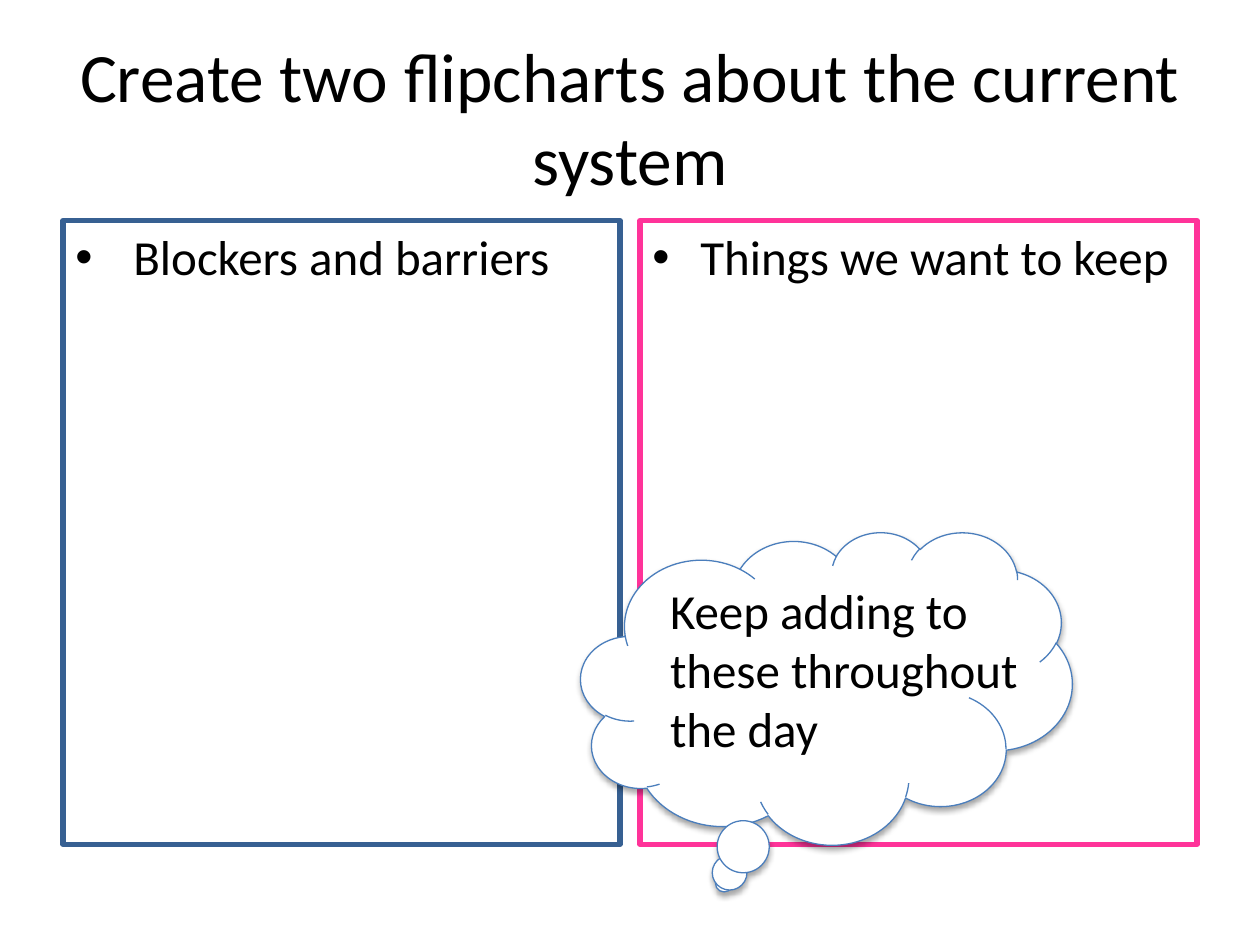
from lxml import etree
from pptx import Presentation
from pptx.dml.color import RGBColor
from pptx.enum.shapes import MSO_SHAPE as Shape
from pptx.enum.text import MSO_ANCHOR as Anchor, PP_ALIGN as Align
from pptx.oxml import parse_xml
from pptx.oxml.ns import nsdecls, qn
from pptx.util import Inches, Pt

BLACK = RGBColor(0x00, 0x00, 0x00)
WHITE = RGBColor(0xFF, 0xFF, 0xFF)
NAVY = RGBColor(0x37, 0x60, 0x92)
PINK = RGBColor(0xFF, 0x33, 0x99)
BLUE = RGBColor(0x4B, 0x7E, 0xBC)


def write(frame, text, size=28, align=Align.LEFT, anchor=Anchor.TOP, indent=None):
    """Fill a text frame; an indent in inches makes a bullet."""
    frame.word_wrap = True
    frame.vertical_anchor = anchor
    para = frame.paragraphs[0]
    para.text = text
    para.alignment = align
    if indent:
        props = para._p.get_or_add_pPr()
        props.set("marL", str(Inches(indent)))
        props.set("indent", str(-Inches(indent)))
        etree.SubElement(props, qn("a:buFont")).set("typeface", "Arial")
        etree.SubElement(props, qn("a:buChar")).set("char", "•")
    font = para.runs[0].font
    font.name = "Calibri"
    font.size = Pt(size)
    font.color.rgb = BLACK


def add_title(slide, box, text):
    title = slide.shapes.title
    title.left, title.top, title.width, title.height = map(Inches, box)
    write(title.text_frame, text, size=39.6, align=Align.CENTER, anchor=Anchor.MIDDLE)


def add_chart_sheet(slide, box, text, color, indent):
    sheet = slide.shapes.add_shape(Shape.RECTANGLE, *map(Inches, box))
    sheet.shadow.inherit = False
    sheet.fill.background()
    sheet.line.color.rgb = color
    sheet.line.width = Pt(3)
    write(sheet.text_frame, text, indent=indent)


def add_cloud(slide, box, text):
    left, top, width, height = box
    cloud = slide.shapes.add_shape(Shape.CLOUD_CALLOUT, *map(Inches, box))
    cloud.fill.solid()
    cloud.fill.fore_color.rgb = WHITE
    cloud.line.color.rgb = BLUE
    cloud.line.width = Pt(0.75)
    # Soft shadow straight below
    cloud._element.spPr.append(parse_xml(
        f'<a:effectLst {nsdecls("a")}>'
        f'<a:outerShdw blurRad="{Pt(3.1)}" dist="{Pt(1.8)}" dir="5400000" rotWithShape="0">'
        '<a:srgbClr val="000000"><a:alpha val="35000"/></a:srgbClr>'
        '</a:outerShdw></a:effectLst>'))
    # Words inside the cloud
    note = slide.shapes.add_textbox(
        Inches(left + 0.61), Inches(top + 0.34), Inches(3), Inches(1.51))
    write(note.text_frame, text)


def main():
    deck = Presentation()
    deck.slide_width, deck.slide_height = Inches(10), Inches(7.5)
    slide = deck.slides.add_slide(deck.slide_layouts[5])

    add_title(slide, (0.5, 0.3, 9, 1.25), "Create two flipcharts about the current system")

    # Two equal sheets between the margins
    margin, gap = 0.5, 0.16
    width = (10 - 2 * margin - gap) / 2
    sheets = [("Blockers and barriers", NAVY, 0.46),
              ("Things we want to keep", PINK, 0.38)]
    for i, (text, color, indent) in enumerate(sheets):
        box = (margin + i * (width + gap), 1.75, width, 4.95)
        add_chart_sheet(slide, box, text, color, indent)

    add_cloud(slide, (4.61, 4.22, 3.9, 2.48), "Keep adding to these throughout the day")
    deck.save("out.pptx")


if __name__ == "__main__":
    main()
